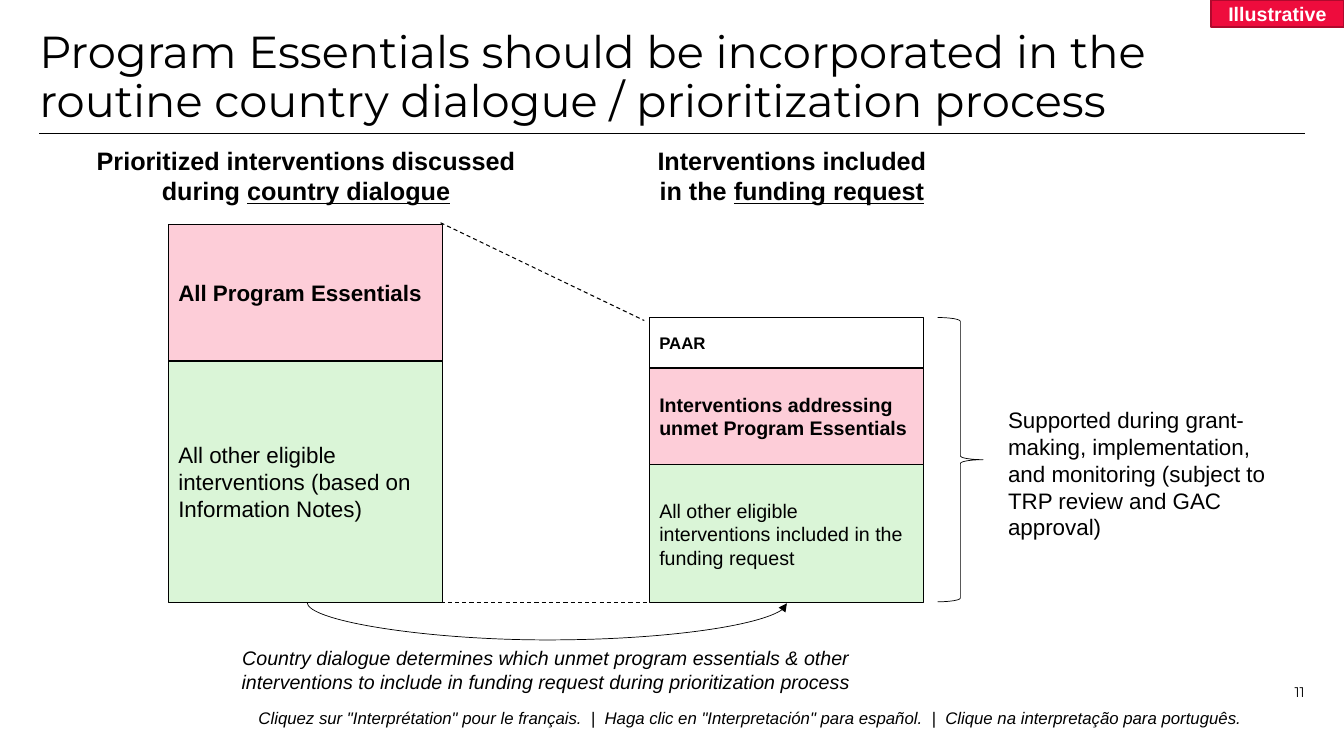
"""Build the slide on Program Essentials in the country dialogue."""
from dataclasses import dataclass

from lxml import etree
from pptx import Presentation
from pptx import util as u
from pptx.dml.color import RGBColor
from pptx.enum import dml, shapes, text
from pptx.oxml import ns

ALIGN, ANCHOR = text.PP_ALIGN, text.MSO_ANCHOR


@dataclass(frozen=True)
class Theme:
    """Colours, fonts and type sizes of the slide."""
    black: str = "000000"
    white: str = "FFFFFF"
    pink: str = "FDCDD8"
    green: str = "DAF5D7"
    red: str = "EE0C3D"
    wine: str = "B0092D"
    body: str = "Arial"
    head: str = "Montserrat"
    title: int = 32
    label: int = 18
    large: int = 16
    mid: int = 14
    small: int = 12
    tiny: int = 10


T = Theme()


def fill_text(shape, runs, size, align=ALIGN.LEFT, anchor=ANCHOR.TOP, color=T.black,
              font=T.body, bold=False, slant=False, inset=True, pitch=None):
    """Write (words, underline) runs as one paragraph in a shape."""
    frame = shape.text_frame
    frame.word_wrap = True
    frame.vertical_anchor = anchor
    if not inset:
        frame.margin_left = frame.margin_right = 0
        frame.margin_top = frame.margin_bottom = 0
    para = frame.paragraphs[0]
    para.alignment = align
    if pitch:
        para.line_spacing = pitch
    for words, under in runs:
        run = para.add_run()
        run.text = words
        run.font.name = font
        run.font.size = u.Pt(size)
        run.font.bold = bold
        run.font.italic = slant
        run.font.underline = under
        run.font.color.rgb = RGBColor.from_string(color)


def add_note(slide, place, runs, size, **style):
    """Add a text box at left, top, width and height."""
    box = slide.shapes.add_textbox(*map(u.Inches, place))
    fill_text(box, runs, size, **style)


def add_form(slide, kind, place, fill=None, line=T.black, weight=1):
    """Add a flat preset shape with an outline."""
    form = slide.shapes.add_shape(kind, *map(u.Inches, place))
    form.shadow.inherit = False
    if fill:
        form.fill.solid()
        form.fill.fore_color.rgb = RGBColor.from_string(fill)
    else:
        form.fill.background()
    form.line.color.rgb = RGBColor.from_string(line)
    form.line.width = u.Pt(weight)
    return form


def add_stack(slide, left, base, blocks):
    """Pile blocks of (height, fill, words, size, bold) upward from a base."""
    top = base
    for height, fill, words, size, bold in blocks:
        top -= height
        block = add_form(slide, shapes.MSO_SHAPE.RECTANGLE, (left, top, 2.72, height), fill)
        fill_text(block, [(words, False)], size, anchor=ANCHOR.MIDDLE, bold=bold)


def add_line(slide, start, end, weight, dash=False, kind=shapes.MSO_CONNECTOR.STRAIGHT):
    """Add a plain or dashed connector without a shadow."""
    line = slide.shapes.add_connector(kind, *map(u.Inches, start + end))
    line.line.color.rgb = RGBColor.from_string(T.black)
    line.line.width = u.Pt(weight)
    if dash:
        line.line.dash_style = dml.MSO_LINE.DASH
    etree.SubElement(line._element.spPr, ns.qn("a:effectLst"))
    return line


def add_swoop(slide, left, right, base, drop):
    """Add a curved arrow that hangs below a base line."""
    span, thin, mid = right - left, 0.01, (left + right) / 2
    swoop = add_line(slide, (mid, base - span / 2), (mid + thin, base + span / 2), 0.5,
                     kind=shapes.MSO_CONNECTOR.CURVE)
    props = swoop._element.spPr
    frame = props.find(ns.qn("a:xfrm"))
    frame.set("rot", "16200000")
    frame.set("flipH", "1")
    geom = props.find(ns.qn("a:prstGeom"))
    guides = geom.find(ns.qn("a:avLst"))
    if guides is None:
        guides = etree.SubElement(geom, ns.qn("a:avLst"))
    bend = round(drop / thin * 100000)
    etree.SubElement(guides, ns.qn("a:gd"), name="adj1", fmla=f"val {bend}")
    etree.SubElement(props.find(ns.qn("a:ln")), ns.qn("a:tailEnd"), type="triangle")


def add_frame(slide):
    """Add the title, rule, footer, page number and tag."""
    add_note(slide, (2.17, 6.97, 10.55, 0.3), [
        ('Cliquez sur "Interprétation" pour le français.  |  Haga clic en "Interpretación" '
         'para español.  |  Clique na interpretação para português.', False)],
        T.small, align=ALIGN.CENTER, anchor=ANCHOR.BOTTOM, slant=True)
    add_line(slide, (0.39, 1.32), (12.94, 1.32), 0.5)
    add_note(slide, (11.96, 6.55, 0.98, 0.4), [("11", False)], T.tiny, align=ALIGN.RIGHT,
             anchor=ANCHOR.BOTTOM, font=T.head, inset=False)
    add_note(slide, (0.39, 0.3, 12.55, 0.51), [
        ("Program Essentials should be incorporated in the routine country dialogue / "
         "prioritization process", False)], T.title, font=T.head, inset=False, pitch=0.9)
    tag = add_form(slide, shapes.MSO_SHAPE.RECTANGLE, (12.01, 0, 1.32, 0.27), T.red, T.wine)
    fill_text(tag, [("Illustrative", False)], T.mid, align=ALIGN.CENTER,
              anchor=ANCHOR.MIDDLE, color=T.white, bold=True)


def main():
    """Build and save the slide."""
    deck = Presentation()
    deck.slide_width, deck.slide_height = u.Inches(13.33), u.Inches(7.5)
    slide = deck.slides.add_slide(deck.slide_layouts[6])
    add_frame(slide)

    heads = [
        (0.84, 4.39, "Prioritized interventions discussed during ", "country dialogue"),
        (6.39, 2.93, "Interventions included in the ", "funding request"),
    ]
    for left, width, lead, topic in heads:
        add_note(slide, (left, 1.39, width, 0.71), [(lead, False), (topic, True)],
                 T.label, align=ALIGN.CENTER, bold=True)

    base = 5.98
    add_stack(slide, 1.67, base, [
        (2.4, T.green, "All other eligible interventions (based on Information Notes)",
         T.large, False),
        (1.35, T.pink, "All Program Essentials", T.large, True),
    ])
    add_stack(slide, 6.44, base, [
        (1.37, T.green, "All other eligible interventions included in the funding request",
         T.mid, False),
        (0.96, T.pink, "Interventions addressing unmet Program Essentials", T.mid, True),
        (0.5, None, "PAAR", T.small, True),
    ])
    add_line(slide, (4.37, 2.21), (6.39, 3.18), 0.75, dash=True)
    add_line(slide, (4.37, base), (6.44, base), 0.75, dash=True)
    add_swoop(slide, 3.04, 7.8, base, 0.38)
    add_note(slide, (2.29, 6.36, 6.25, 0.57), [
        ("Country dialogue determines which unmet program essentials & other interventions "
         "to include in funding request during prioritization process", False)],
        T.mid, align=ALIGN.CENTER, slant=True)

    brace = add_form(slide, shapes.MSO_SHAPE.LEFT_BRACE, (9.3, 3.15, 0.45, 2.82), weight=0.5)
    brace.rotation = 180
    add_note(slide, (9.9, 3.98, 2.76, 1.45), [
        ("Supported during grant-making, implementation, and monitoring (subject to TRP "
         "review and GAC approval)", False)], T.large)
    deck.save("out.pptx")


if __name__ == "__main__":
    main()
